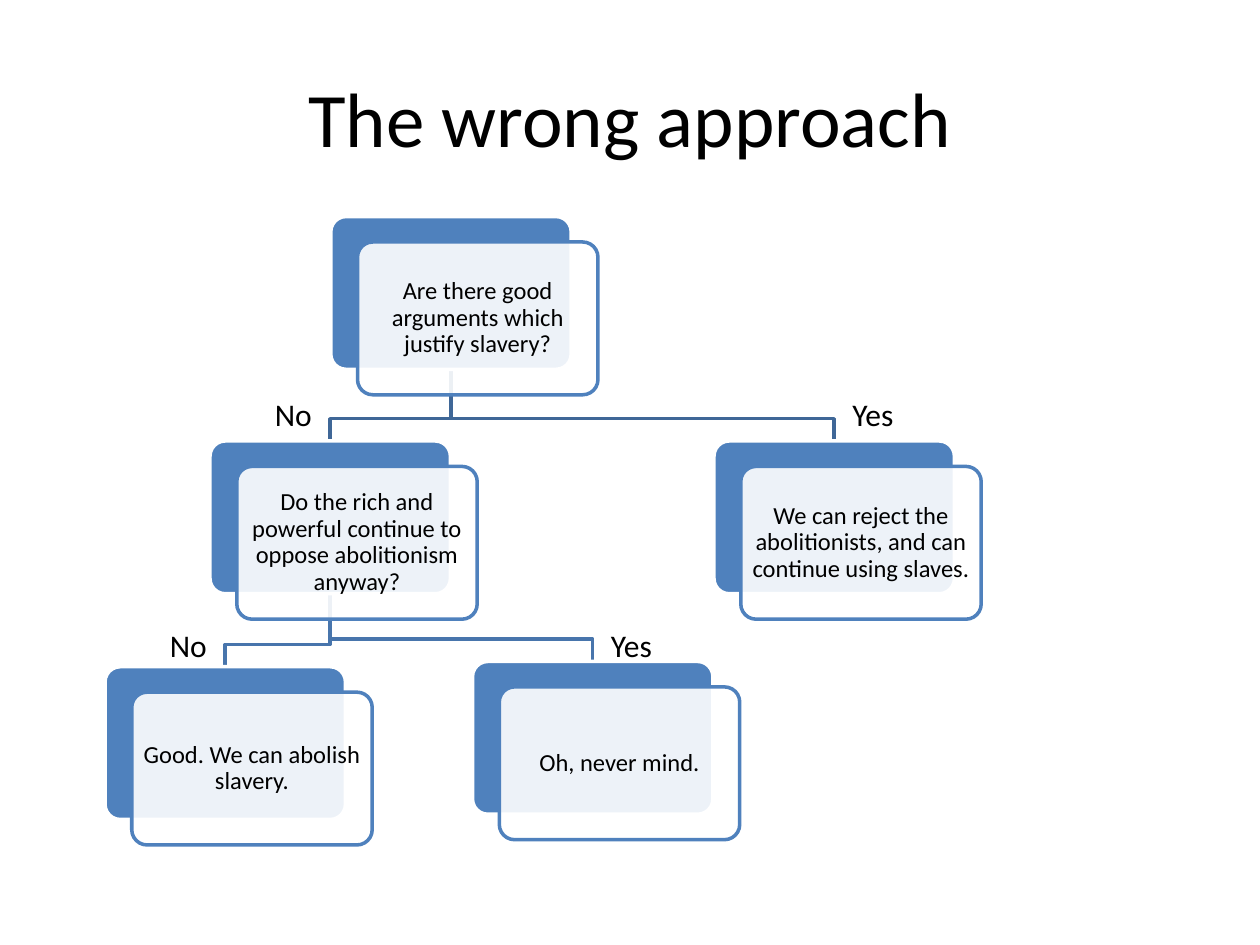
from lxml import etree
from pptx import Presentation
from pptx.dml.color import RGBColor
from pptx.enum.shapes import MSO_SHAPE
from pptx.enum.text import MSO_ANCHOR, PP_ALIGN
from pptx.oxml.ns import qn
from pptx.util import Inches, Pt

ROUNDED = MSO_SHAPE.ROUNDED_RECTANGLE
MIDDLE, TOP = MSO_ANCHOR.MIDDLE, MSO_ANCHOR.TOP
CENTER, LEFT = PP_ALIGN.CENTER, PP_ALIGN.LEFT

SLIDE_WIDTH, SLIDE_HEIGHT = Inches(10), Inches(7.5)
COLUMNS, ROWS = 240, 180
CARD_WIDTH, CARD_HEIGHT = 45.8, 29.1
FRONT_SHIFT = (5.1, 4.85)
BEND_RISE = 4.25
BLUE, WHITE, BLACK = "4F81BD", "FFFFFF", "000000"

CARDS = {
    "question": (63, 41.25, "Are there good arguments which justify slavery?"),
    "power": (40, 84, "Do the rich and powerful continue to oppose abolitionism anyway?"),
    "abolish": (20, 127, "Good. We can abolish slavery."),
    "never mind": (90, 126, "Oh, never mind."),
    "reject": (136, 84, "We can reject the abolitionists, and can continue using slaves."),
}
BRANCHES = [
    ("question", "reject", "3F6797"),
    ("power", "never mind", "4875AC"),
    ("power", "abolish", "4875AC"),
    ("question", "power", "3F6797"),
]
ANSWERS = [
    ((160, 74, 28, 9.6), "Yes"),
    ((50, 74, 16, 9.6), "No"),
    ((114, 118, 28, 9.6), "Yes"),
    ((30, 118, 12, 9.6), "No"),
]


def color(value):
    """Turn a hex string into a colour."""
    return RGBColor.from_string(value)


def place(column, row):
    """Turn a grid position or size into slide lengths."""
    return round(column * SLIDE_WIDTH / COLUMNS), round(row * SLIDE_HEIGHT / ROWS)


def write(shape, text, size, align, anchor):
    """Put one black paragraph into a shape."""
    frame = shape.text_frame
    frame.word_wrap = True
    frame.vertical_anchor = anchor
    frame.text = text
    para = frame.paragraphs[0]
    para.alignment = align
    font = para.runs[0].font
    font.name, font.size = "Calibri", Pt(size)
    font.color.rgb = color(BLACK)
    return frame


def add_text(page, box, text, size, align=LEFT, anchor=TOP):
    """Add a text box that fills the given grid box."""
    column, row, width, height = box
    shape = page.shapes.add_textbox(*place(column, row), *place(width, height))
    write(shape, text, size, align, anchor)


def add_panel(page, column, row, fill, line):
    """Add one rounded rectangle of card size."""
    panel = page.shapes.add_shape(
        ROUNDED, *place(column, row), *place(CARD_WIDTH, CARD_HEIGHT))
    panel.shadow.inherit = False
    panel.adjustments[0] = 0.1
    panel.fill.solid()
    panel.fill.fore_color.rgb = color(fill)
    panel.line.color.rgb = color(line)
    panel.line.width = Pt(2)
    return panel


def add_card(page, column, row, text):
    """Add a blue panel with a translucent text panel shifted over it."""
    add_panel(page, column, row, BLUE, WHITE)
    right, down = FRONT_SHIFT
    front = add_panel(page, column + right, row + down, WHITE, BLUE)
    tint = front.fill._xPr.find(qn("a:solidFill"))[0]
    etree.SubElement(tint, qn("a:alpha")).set("val", "90000")
    frame = write(front, text, 14, CENTER, MIDDLE)
    frame.margin_left = frame.margin_right = Inches(0.02)
    frame.margin_top = frame.margin_bottom = Inches(0.02)
    frame.paragraphs[0].line_spacing = 0.9


def add_branch(page, parent, child, line):
    """Draw a stepped line from the foot of one card to the top of another."""
    start = parent[0] + CARD_WIDTH / 2
    end = child[0] + CARD_WIDTH / 2
    foot, top = parent[1] + CARD_HEIGHT, child[1]
    bend = top - BEND_RISE
    builder = page.shapes.build_freeform(*place(start, foot))
    corners = [(start, bend), (end, bend), (end, top)]
    builder.add_line_segments([place(*corner) for corner in corners], close=False)
    branch = builder.convert_to_shape()
    branch.shadow.inherit = False
    branch.fill.background()
    branch.line.color.rgb = color(line)
    branch.line.width = Pt(2)


def add_tree(page):
    """Build the decision tree with its branches, cards and answers."""
    for parent, child, line in BRANCHES:
        add_branch(page, CARDS[parent], CARDS[child], line)
    for column, row, text in CARDS.values():
        add_card(page, column, row, text)
    for box, text in ANSWERS:
        add_text(page, box, text, 18)


def main():
    """Build and save the deck."""
    deck = Presentation()
    deck.slide_width, deck.slide_height = SLIDE_WIDTH, SLIDE_HEIGHT
    page = deck.slides.add_slide(deck.slide_layouts[6])
    add_text(page, (12, 7.2, 216, 30), "The wrong approach", 44, CENTER, MIDDLE)
    add_tree(page)
    deck.save("out.pptx")


if __name__ == "__main__":
    main()
